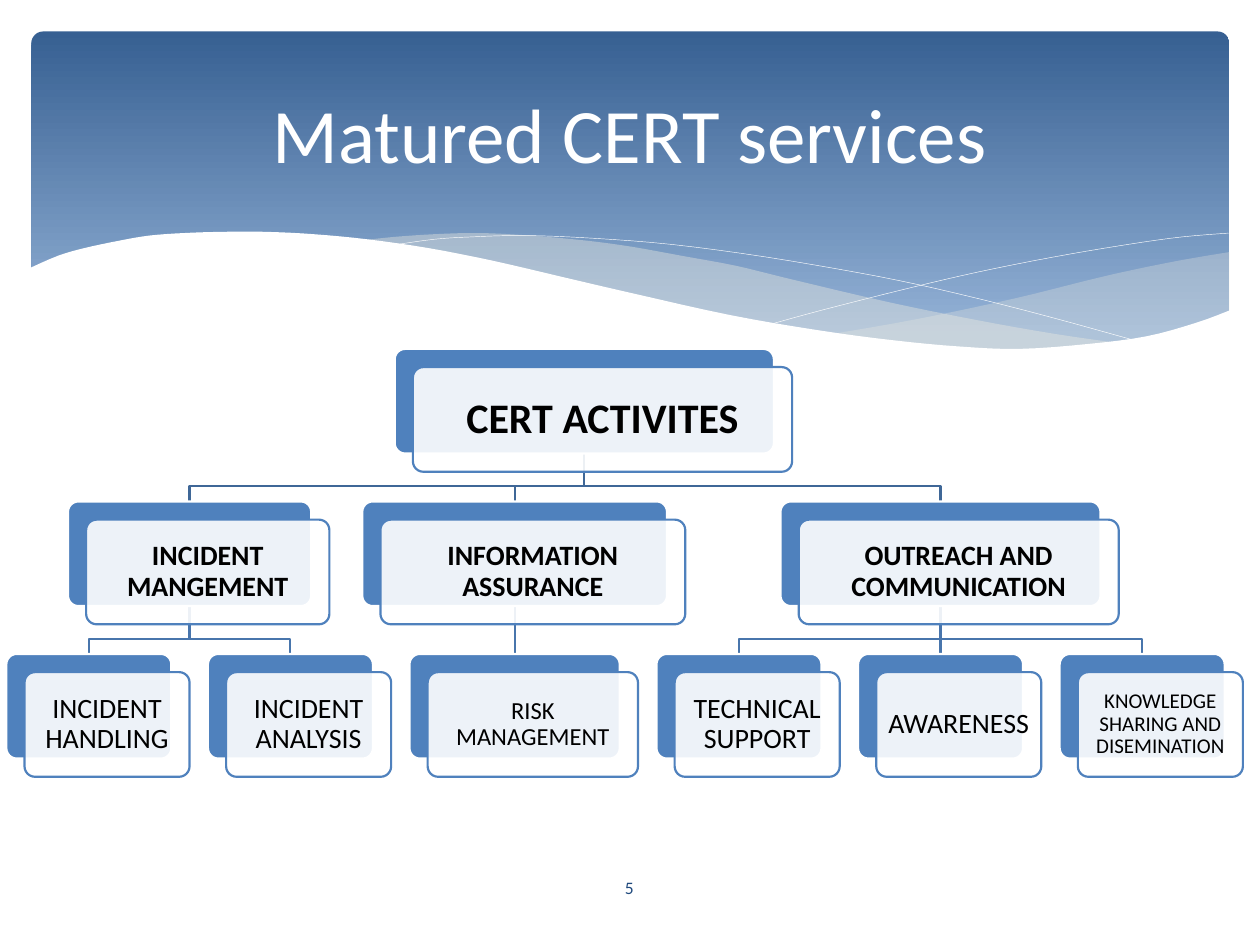
import itertools
from dataclasses import dataclass
from typing import Optional

import lxml.etree
import pptx
import pptx.dml.color
import pptx.enum.shapes
import pptx.enum.text
import pptx.oxml.ns
import pptx.util

Pt = pptx.util.Pt
RGB = pptx.dml.color.RGBColor
SHAPE = pptx.enum.shapes.MSO_SHAPE
CENTER = pptx.enum.text.PP_ALIGN.CENTER
MIDDLE = pptx.enum.text.MSO_ANCHOR.MIDDLE
qn = pptx.oxml.ns.qn

WHITE = RGB(0xFF, 0xFF, 0xFF)
BLACK = RGB(0x00, 0x00, 0x00)
BANNER_TOP = RGB(0x37, 0x60, 0x92)
BANNER_BOTTOM = RGB(0x95, 0xB3, 0xD7)
MIST = RGB(0xEE, 0xEC, 0xE1)
CARD_BLUE = RGB(0x4F, 0x81, 0xBD)
ROOT_LINK = RGB(0x3F, 0x67, 0x97)
BRANCH_LINK = RGB(0x48, 0x75, 0xAC)
NAVY = RGB(0x1F, 0x49, 0x7D)

FIRST_ROW, ROW_STEP = 199.4, 87.15
CARD_HEIGHT, CARD_OFFSET = 59.8, 10.4
FIRST_LEAF, LEAF_GAP = 3.6, 20.9
BUS_RISE = 8.7
LINE_WIDTH = 1.25

Point = tuple[float, float]


@dataclass
class Wave:
    arcs: list[list[Point]]
    fill: Optional[RGB] = None
    opacity: int = 100


@dataclass
class Card:
    label: str
    width: float
    size: int = 16
    inset: float = 5
    children: tuple = ()
    left: float = 0
    level: int = 0

    @property
    def center(self) -> float:
        return self.left + self.width / 2

    @property
    def top(self) -> float:
        return FIRST_ROW + self.level * ROW_STEP


WAVES = [
    Wave([[(702.7, 144), (673.2, 149), (641.5, 155.5), (619.9, 160.6), (579.6, 170.6),
           (524.9, 182.2), (475.9, 190.8)],
          [(475.9, 190.8), (507.6, 195.1), (536.4, 198), (562.3, 199.4), (586.1, 200.2),
           (614.9, 198.7), (640.1, 195.8), (663.1, 190.8), (683.3, 185), (702.7, 177.8)]],
         MIST, 29),
    Wave([[(643, 196.6), (602.6, 190.8), (558, 182.9), (508.3, 172.8), (452.9, 159.8),
           (420.5, 151.9), (389.5, 146.2), (361.4, 141.1), (334.8, 137.5), (302.4, 134.6),
           (273.6, 133.2), (247.7, 133.9), (225.4, 135.4), (205.9, 137.5)],
          [(205.9, 137.5), (246.2, 143.3), (290.9, 151.9), (323.3, 159.8), (381.6, 172.8),
           (432.7, 183.6), (478.8, 191.5), (519.8, 197.3), (556.6, 199.4), (588.2, 200.2),
           (617, 199.4), (643, 196.6)]],
         MIST, 40),
    Wave([[(222.5, 140.4), (247.7, 136.8), (269.3, 135.4), (299.5, 134.6), (337.7, 136.1),
           (383.8, 139.7), (437.8, 146.9), (500.4, 157.7), (547.2, 167.8), (598.3, 180.7),
           (653, 195.8)]]),
    Wave([[(441.4, 185), (470.2, 177.1), (518.4, 164.9), (558.7, 155.5), (601.9, 146.9),
           (644.4, 139.7), (675.4, 135.4), (702, 133.2)]]),
    Wave([[(703.4, 177.1), (684, 184.3), (655.2, 192.2), (621.4, 196.6), (582.5, 199.4),
           (547.9, 198), (509.8, 194.4), (466.6, 188.6), (416.9, 180), (362.2, 167.8),
           (321.8, 158.4), (281.5, 149), (244.8, 141.8), (210.2, 136.8), (180, 133.9),
           (151.9, 132.5), (127.4, 132.5), (105.1, 133.2), (85.7, 134.6), (68.4, 137.5),
           (48.2, 141.8), (33.1, 146.2), (16.6, 153.4)],
          [(16.6, 236.9), (703.4, 236.9)]],
         WHITE),
]

LEAVES = (
    Card("INCIDENT HANDLING", 94.3),
    Card("INCIDENT ANALYSIS", 94.3),
    Card("RISK MANAGEMENT", 120.2, 14, 4.3),
    Card("TECHNICAL SUPPORT", 94.3),
    Card("AWARENESS", 94.3),
    Card("KNOWLEDGE SHARING AND DISEMINATION", 94.3, 12, 3.6),
)
BRANCHES = (
    Card("INCIDENT MANGEMENT", 139, children=LEAVES[:2]),
    Card("INFORMATION ASSURANCE", 174.2, children=LEAVES[2:3]),
    Card("OUTREACH AND COMMUNICATION", 182.9, children=LEAVES[3:]),
)
ROOT = Card("CERT ACTIVITES", 216.7, 24, 7.2, BRANCHES)


def apply_format(target, values: dict) -> None:
    for name, value in values.items():
        setattr(target, name, value)


def smooth(points: list[Point], steps: int = 4) -> list[Point]:
    if len(points) < 3:
        return points
    padded = [points[0], *points, points[-1]]
    curve = [points[0]]
    for a, b, c, d in zip(padded, padded[1:], padded[2:], padded[3:]):
        for t in (step / steps for step in range(1, steps + 1)):
            curve.append(tuple(
                0.5 * (2 * q + (r - p) * t + (2 * p - 5 * q + 4 * r - s) * t**2
                       + (3 * q - p - 3 * r + s) * t**3)
                for p, q, r, s in zip(a, b, c, d)))
    return curve


def paint(shape, fill: Optional[RGB], line: Optional[RGB], width: float, opacity: int = 100) -> None:
    shape.shadow.inherit = False
    if fill is None:
        shape.fill.background()
    else:
        shape.fill.solid()
        shape.fill.fore_color.rgb = fill
        if opacity < 100:
            color = shape._element.spPr.find(qn("a:solidFill"))[0]
            lxml.etree.SubElement(color, qn("a:alpha")).set("val", str(opacity * 1000))
    if line is None:
        shape.line.fill.background()
    else:
        shape.line.color.rgb = line
        shape.line.width = Pt(width)


def draw_outline(shapes, points: list[Point], close: bool):
    corners = [(Pt(x), Pt(y)) for x, y in points]
    builder = shapes.build_freeform(*corners[0])
    builder.add_line_segments(corners[1:], close=close)
    return builder.convert_to_shape()


def draw_wave(shapes, wave: Wave) -> None:
    points = list(itertools.chain.from_iterable(smooth(arc) for arc in wave.arcs))
    outline = draw_outline(shapes, points, wave.fill is not None)
    paint(outline, wave.fill, None if wave.fill else WHITE, 0.25, wave.opacity)


def draw_banner(shapes) -> None:
    banner = shapes.add_shape(SHAPE.ROUNDED_RECTANGLE, Pt(18), Pt(18), Pt(684.5), Pt(194.4))
    banner.adjustments[0] = 0.034
    banner.shadow.inherit = False
    banner.line.fill.background()
    banner.fill.gradient()
    banner.fill.gradient_angle = 270
    for stop, color, position in zip(banner.fill.gradient_stops, (BANNER_TOP, BANNER_BOTTOM), (0, 0.9)):
        stop.color.rgb = color
        stop.position = position


def write(frame, text: str, font: dict, margin: Optional[float] = None, spacing: float = 1) -> None:
    frame.text = text
    apply_format(frame, {"word_wrap": True, "vertical_anchor": MIDDLE})
    if margin is not None:
        apply_format(frame, {f"margin_{side}": Pt(margin) for side in ("left", "top", "right", "bottom")})
    paragraph = frame.paragraphs[0]
    apply_format(paragraph, {"alignment": CENTER, "line_spacing": spacing})
    apply_format(paragraph.runs[0].font, {"name": "Calibri", **font})


def arrange(card: Card, level: int = 0) -> None:
    card.level = level
    for child in card.children:
        arrange(child, level + 1)
    if card.children:
        first, last = card.children[0], card.children[-1]
        card.left = (first.left + last.left + last.width - card.width) / 2


def draw_links(shapes, card: Card) -> None:
    color = BRANCH_LINK if card.level else ROOT_LINK
    start = card.top + CARD_HEIGHT
    for child in card.children:
        draw_links(shapes, child)
        if abs(child.center - card.center) < 1:
            link = shapes.add_connector(pptx.enum.shapes.MSO_CONNECTOR.STRAIGHT, Pt(card.center),
                                        Pt(start), Pt(card.center), Pt(child.top))
            lxml.etree.SubElement(link._element.spPr, qn("a:effectLst"))
            link.line.color.rgb = color
            link.line.width = Pt(LINE_WIDTH)
        else:
            bus = child.top - BUS_RISE
            route = [(card.center, start), (card.center, bus), (child.center, bus), (child.center, child.top)]
            paint(draw_outline(shapes, route, False), None, color, LINE_WIDTH)


def draw_card(shapes, card: Card) -> None:
    for offset, fill, line, opacity in ((0, CARD_BLUE, WHITE, 100), (CARD_OFFSET, WHITE, CARD_BLUE, 90)):
        panel = shapes.add_shape(SHAPE.ROUNDED_RECTANGLE, Pt(card.left + offset), Pt(card.top + offset),
                                 Pt(card.width), Pt(CARD_HEIGHT))
        panel.adjustments[0] = 0.1
        paint(panel, fill, line, LINE_WIDTH, opacity)
    font = {"size": Pt(card.size), "bold": bool(card.children)}
    write(panel.text_frame, card.label, font, card.inset, 0.9)
    panel.text_frame.paragraphs[0].runs[0].font.color.rgb = BLACK
    for child in card.children:
        draw_card(shapes, child)


def main() -> None:
    deck = pptx.Presentation()
    apply_format(deck, {"slide_width": Pt(720), "slide_height": Pt(540)})
    slide = deck.slides.add_slide(deck.slide_layouts[5])
    shapes = slide.shapes

    draw_banner(shapes)
    for wave in WAVES:
        draw_wave(shapes, wave)

    left = FIRST_LEAF
    for leaf in LEAVES:
        leaf.left = left
        left += leaf.width + LEAF_GAP
    arrange(ROOT)
    draw_links(shapes, ROOT)
    draw_card(shapes, ROOT)

    heading = shapes.title
    apply_format(heading, {"left": Pt(36), "top": Pt(26.6), "width": Pt(648), "height": Pt(98.6)})
    write(heading.text_frame, "Matured CERT services", {"size": Pt(44)})
    heading.text_frame.paragraphs[0].runs[0].font.color.rgb = WHITE
    heading._element.getparent().append(heading._element)

    page_number = shapes.add_textbox(Pt(314), Pt(492.5), Pt(91.4), Pt(28.8))
    write(page_number.text_frame, "5", {"size": Pt(10)})
    page_number.text_frame.paragraphs[0].runs[0].font.color.rgb = NAVY

    deck.save("out.pptx")


if __name__ == "__main__":
    main()
